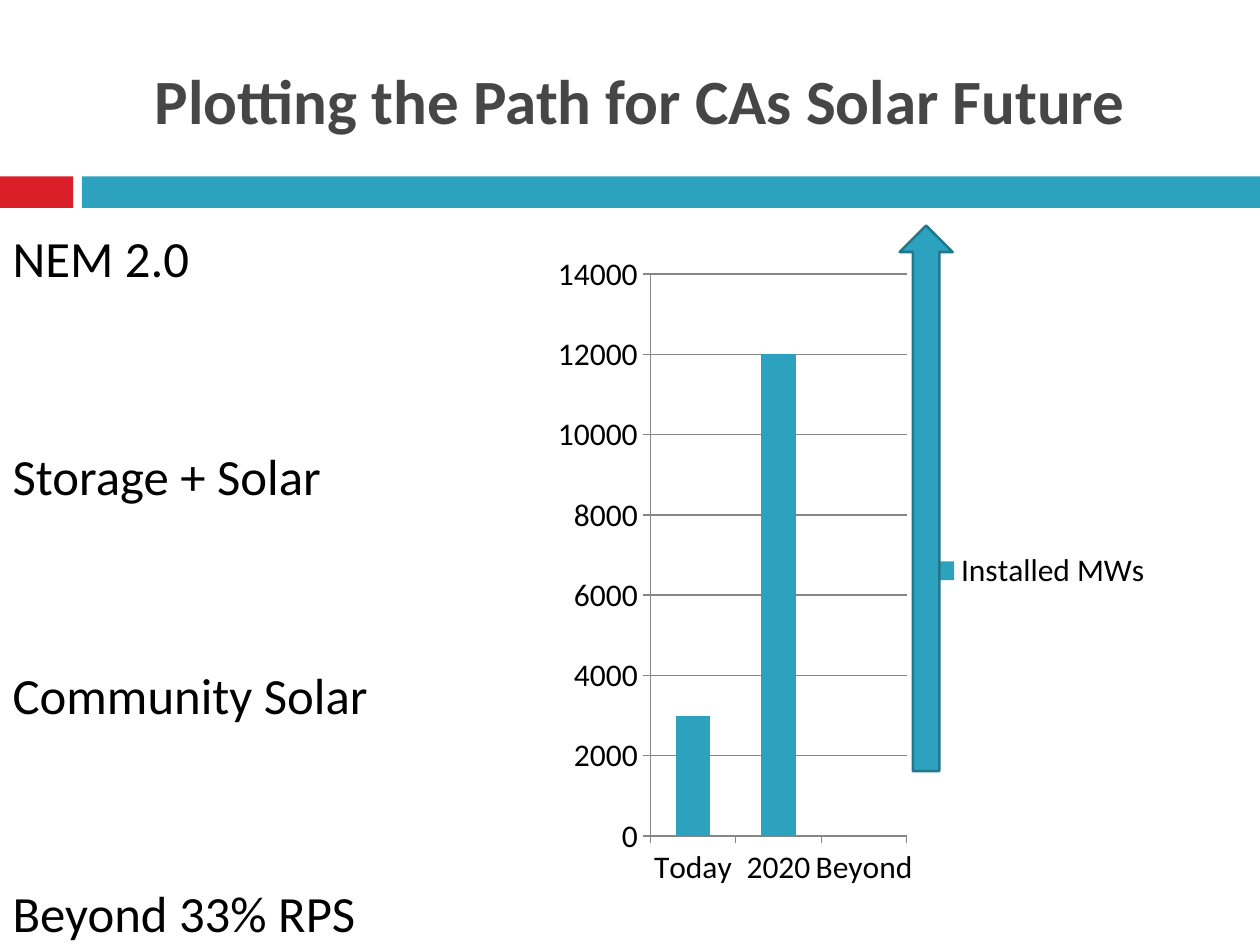
import pptx
import pptx.chart.data
import pptx.dml.color
import pptx.enum.chart
import pptx.enum.shapes
import pptx.enum.text
import pptx.util
from lxml import etree
from pptx.util import Inches

SHAPES = pptx.enum.shapes.MSO_SHAPE
ANCHOR = pptx.enum.text.MSO_ANCHOR
ALIGN = pptx.enum.text.PP_ALIGN


def color(value):
    return pptx.dml.color.RGBColor.from_string(value)


class SlideBuilder:
    font_name = "Calibri"
    teal = "2DA2BF"
    dark_teal = "21788D"
    red = "DA1F28"
    title_gray = "464646"
    grid_gray = "868686"
    black = "000000"

    def __init__(self, slide):
        self.slide = slide

    def place(self, shape, left, top, width, height):
        shape.left, shape.top = Inches(left), Inches(top)
        shape.width, shape.height = Inches(width), Inches(height)

    def style_font(self, font, size, fill, bold=False):
        font.name = self.font_name
        font.size = pptx.util.Pt(size)
        font.bold = bold
        font.color.rgb = color(fill)

    def add_run(self, paragraph, text, size, fill, bold=False):
        run = paragraph.add_run()
        run.text = text
        self.style_font(run.font, size, fill, bold)

    def prepare_frame(self, placeholder, anchor):
        frame = placeholder.text_frame
        frame.word_wrap = True
        frame.auto_size = pptx.enum.text.MSO_AUTO_SIZE.NONE
        frame.vertical_anchor = anchor
        return frame

    def title(self, text, *box):
        placeholder = self.slide.shapes.title
        self.place(placeholder, *box)
        paragraph = self.prepare_frame(placeholder, ANCHOR.MIDDLE).paragraphs[0]
        paragraph.alignment = ALIGN.CENTER
        self.add_run(paragraph, text, 36, self.title_gray, bold=True)

    def topics(self, items, gap, *box):
        placeholder = self.slide.placeholders[1]
        self.place(placeholder, *box)
        frame = self.prepare_frame(placeholder, ANCHOR.TOP)
        for index, item in enumerate(items):
            paragraph = frame.add_paragraph() if index else frame.paragraphs[0]
            paragraph.alignment = ALIGN.LEFT
            paragraph.space_before = pptx.util.Pt(gap if index else 0)
            self.add_run(paragraph, item, 29, self.black)
            properties = paragraph._p.get_or_add_pPr()
            properties.set("marL", "0")
            properties.set("indent", "0")
            etree.SubElement(properties, pptx.oxml.ns.qn("a:buNone"))

    def shape(self, kind, fill, *box, line=None):
        shape = self.slide.shapes.add_shape(kind, *map(Inches, box))
        shape.shadow.inherit = False
        shape.fill.solid()
        shape.fill.fore_color.rgb = color(fill)
        if line:
            shape.line.color.rgb = color(line)
            shape.line.width = pptx.util.Pt(1.5)
        else:
            shape.line.fill.background()

    def column_chart(self, categories, name, values, *box):
        data = pptx.chart.data.CategoryChartData()
        data.categories = categories
        data.add_series(name, values)
        chart = self.slide.shapes.add_chart(
            pptx.enum.chart.XL_CHART_TYPE.COLUMN_CLUSTERED, *map(Inches, box), data
        ).chart
        self.style_font(chart.font, 18, self.black)
        chart.has_title = False
        chart.has_legend = True
        chart.legend.position = pptx.enum.chart.XL_LEGEND_POSITION.RIGHT
        chart.legend.include_in_layout = False
        plot = chart.plots[0]
        plot.gap_width = 150
        plot.vary_by_categories = False
        series_fill = plot.series[0].format.fill
        series_fill.solid()
        series_fill.fore_color.rgb = color(self.teal)
        chart.value_axis.has_major_gridlines = True
        for axis in (chart.category_axis, chart.value_axis):
            axis.major_tick_mark = pptx.enum.chart.XL_TICK_MARK.OUTSIDE
            axis.minor_tick_mark = pptx.enum.chart.XL_TICK_MARK.NONE
        for part in (chart.category_axis, chart.value_axis, chart.value_axis.major_gridlines):
            part.format.line.color.rgb = color(self.grid_gray)
            part.format.line.width = pptx.util.Pt(0.75)


def main():
    presentation = pptx.Presentation()
    presentation.slide_width = Inches(10)
    presentation.slide_height = Inches(7.5)
    slide = presentation.slides.add_slide(presentation.slide_layouts[1])
    builder = SlideBuilder(slide)
    builder.shape(SHAPES.RECTANGLE, builder.red, 0, 1.4, 0.58, 0.25)
    builder.shape(SHAPES.RECTANGLE, builder.teal, 0.65, 1.4, 9.35, 0.25)
    builder.title("Plotting the Path for CAs Solar Future", 0.62, 0.25, 8.92, 1.08)
    builder.topics(
        ["NEM 2.0", "Storage + Solar", "Community Solar", "Beyond 33% RPS"],
        90, 0, 1.75, 5.08, 5.75,
    )
    builder.column_chart(
        ["Today", "2020", "Beyond"], "Installed MWs", [3000, 12000, 0],
        4.33, 1.92, 4.92, 5.22,
    )
    builder.shape(
        SHAPES.UP_ARROW, builder.teal, 7.14, 1.79, 0.42, 4.33, line=builder.dark_teal
    )
    presentation.save("out.pptx")


if __name__ == "__main__":
    main()
